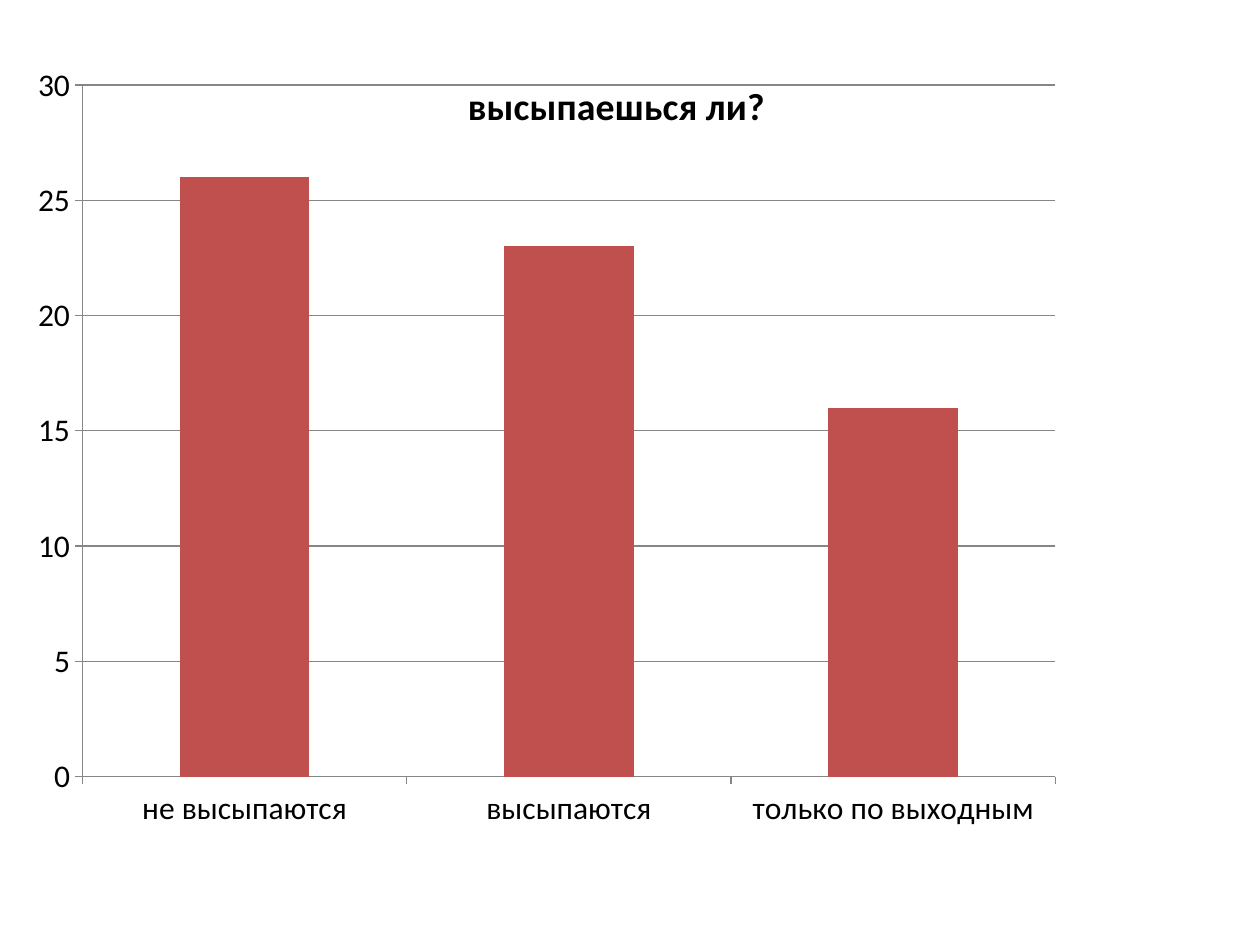
from dataclasses import dataclass

from lxml import etree
from pptx import Presentation, util as u
from pptx.chart.data import CategoryChartData
from pptx.dml.color import RGBColor
from pptx.enum import chart as ch
from pptx.oxml.ns import qn

COLORS = {"text": "000000", "bar": "C0504D", "line": "868686"}
FONT = "Calibri"


@dataclass
class Answer:
    label: str
    count: int


QUESTION = "высыпаешься ли?"
ANSWERS = [
    Answer("не высыпаются", 26),
    Answer("высыпаются", 23),
    Answer("только по выходным", 16),
]


def rgb(name: str) -> RGBColor:
    return RGBColor.from_string(COLORS[name])


def style_font(font, size: float, bold: bool = False) -> None:
    font.name, font.size, font.bold = FONT, u.Pt(size), bold
    font.color.rgb = rgb("text")


def style_line(line) -> None:
    line.color.rgb = rgb("line")
    line.width = u.Pt(0.75)


def set_layout(parent, index: int, **values) -> None:
    """Place a chart part by fractions of the chart area."""
    for old in parent.findall(qn("c:layout")):
        parent.remove(old)
    layout = etree.Element(qn("c:layout"))
    manual = etree.SubElement(layout, qn("c:manualLayout"))
    for tag, value in values.items():
        etree.SubElement(manual, qn(f"c:{tag}")).set("val", str(value))
    parent.insert(index, layout)


def add_answer_chart(slide) -> None:
    data = CategoryChartData()
    data.categories = [a.label for a in ANSWERS]
    data.add_series(QUESTION, [a.count for a in ANSWERS])
    chart = slide.shapes.add_chart(
        ch.XL_CHART_TYPE.COLUMN_STACKED,
        u.Cm(0.3), u.Cm(1.12), u.Cm(24.31), u.Cm(16.54), data).chart
    chart.has_legend = False
    style_font(chart.font, 18)

    # Title, laid over the plot area
    chart.has_title = True
    title = chart.chart_title
    title.text_frame.text = QUESTION
    style_font(title.text_frame.paragraphs[0].runs[0].font, 21.6, bold=True)
    title.include_in_layout = True
    set_layout(title._element, 1, xMode="edge", yMode="edge", x=0.37, y=0.02)

    # Plot area and bars
    plot = chart.plots[0]
    plot.gap_width, plot.overlap, plot.vary_by_categories = 150, 100, False
    fill = plot.series[0].format.fill
    fill.solid()
    fill.fore_color.rgb = rgb("bar")
    set_layout(chart._chartSpace.chart.plotArea, 0, layoutTarget="inner",
               xMode="edge", yMode="edge", x=0.056, y=0.036, w=0.807, h=0.843)

    # Axes
    for axis in (chart.category_axis, chart.value_axis):
        axis.major_tick_mark = ch.XL_TICK_MARK.OUTSIDE
        axis.minor_tick_mark = ch.XL_TICK_MARK.NONE
        style_line(axis.format.line)
        style_font(axis.tick_labels.font, 18)
    value_axis = chart.value_axis
    value_axis.minimum_scale, value_axis.maximum_scale = 0, 30
    value_axis.major_unit = 5
    value_axis.has_major_gridlines = True
    style_line(value_axis.major_gridlines.format.line)


def main() -> None:
    prs = Presentation()
    prs.slide_width, prs.slide_height = u.Cm(25.4), u.Cm(19.05)
    add_answer_chart(prs.slides.add_slide(prs.slide_layouts[6]))
    prs.save("out.pptx")


if __name__ == "__main__":
    main()
